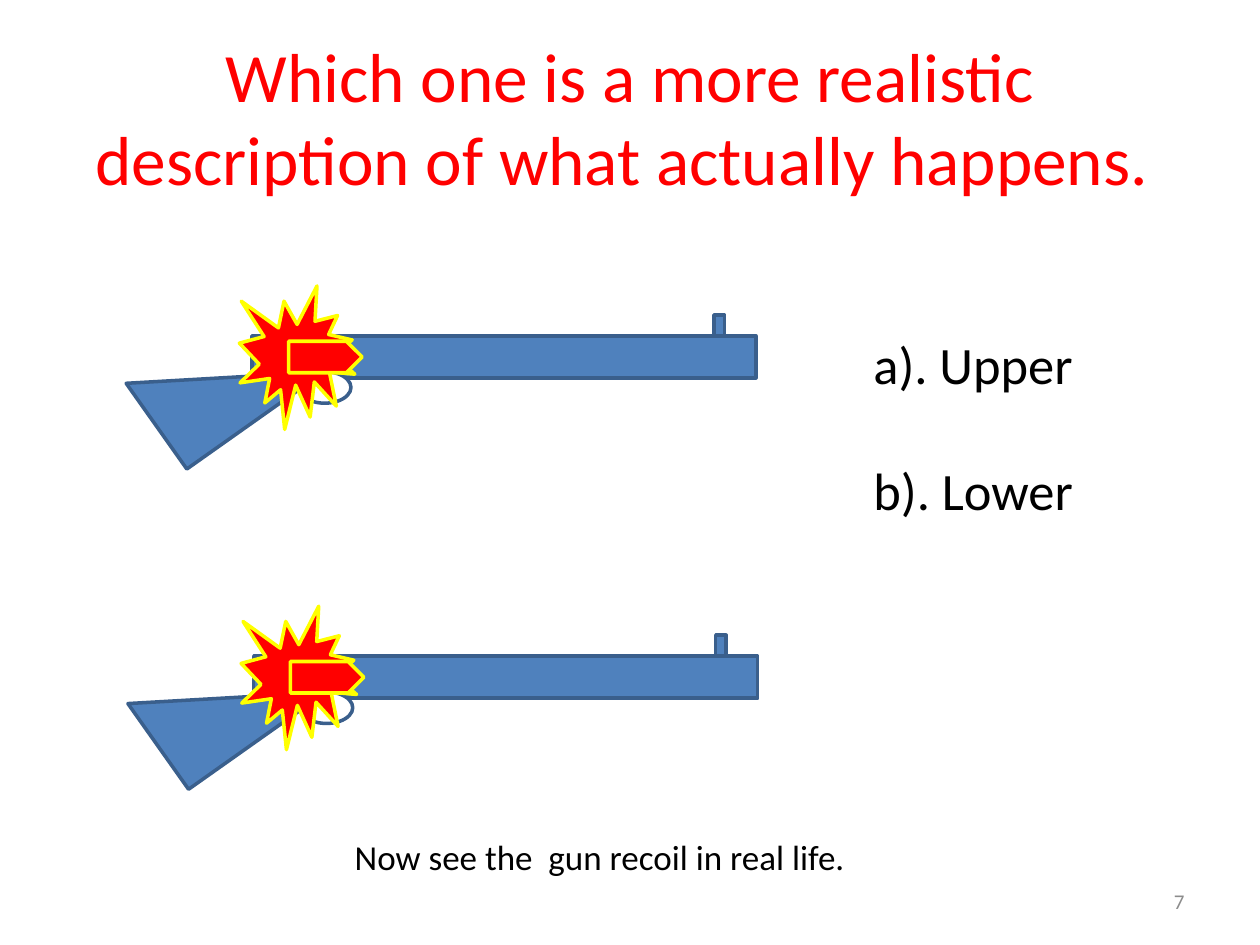
from dataclasses import dataclass

from lxml import etree
from pptx import Presentation
from pptx.dml.color import RGBColor
from pptx.enum.shapes import MSO_CONNECTOR, MSO_SHAPE
from pptx.enum.text import MSO_ANCHOR, PP_ALIGN
from pptx.oxml.ns import qn
from pptx.util import Pt

RECT = MSO_SHAPE.RECTANGLE
WEDGE = MSO_SHAPE.RIGHT_TRIANGLE
OVAL = MSO_SHAPE.OVAL
BURST = MSO_SHAPE.EXPLOSION1
PENTA = MSO_SHAPE.PENTAGON
LINE = MSO_CONNECTOR.STRAIGHT
LEFT, MID, RIGHT = PP_ALIGN.LEFT, PP_ALIGN.CENTER, PP_ALIGN.RIGHT
TOP, CENTER = MSO_ANCHOR.TOP, MSO_ANCHOR.MIDDLE


@dataclass(frozen=True)
class Theme:
    font: str = "Calibri"
    red: str = "FF0000"
    yellow: str = "FFFF00"
    steel: str = "4F81BD"
    edge: str = "3A5F8C"
    spring: str = "4B7EBC"
    white: str = "FFFFFF"
    black: str = "000000"
    gray: str = "8C8C8C"
    title: float = 39.6
    choice: float = 30
    note: float = 20
    number: float = 12
    stroke: float = 2
    thin: float = 0.75


THEME = Theme()


def rgb(code):
    return RGBColor.from_string(code)


def add_part(shapes, kind, box, fill, edge, turn=0):
    part = shapes.add_shape(kind, *map(Pt, box))
    part.shadow.inherit = False
    part.fill.solid()
    part.fill.fore_color.rgb = rgb(fill)
    part.line.color.rgb = rgb(edge)
    part.line.width = Pt(THEME.stroke)
    part.rotation = turn


def add_text(slide, box, lines, size, color, align=LEFT, anchor=TOP, gap=0):
    frame = slide.shapes.add_textbox(*map(Pt, box)).text_frame
    frame.word_wrap = True
    frame.vertical_anchor = anchor
    for i, line in enumerate(lines):
        para = frame.add_paragraph() if i else frame.paragraphs[0]
        para.alignment = align
        if i:
            para.space_before = Pt(gap)
        run = para.add_run()
        run.text = line
        run.font.name = THEME.font
        run.font.size = Pt(size)
        run.font.color.rgb = rgb(color)


def add_gun(slide, box):
    """Draw a gun whose barrel fills the box."""
    x, y, w, h = box
    gun = slide.shapes.add_group_shape().shapes
    parts = [
        (RECT, box, THEME.steel, 0),
        (WEDGE, (x - 63.4, y - 6.2, 96, 60), THEME.steel, 324.7),
        (RECT, (x + w - 24, y - 12, 6, 12), THEME.steel, 0),
        (OVAL, (x + 26.6, y + h - 3.6, 30, 18), THEME.white, 0),
    ]
    for kind, place, fill, turn in parts:
        add_part(gun, kind, place, fill, THEME.edge, turn)

    # Trigger
    ends = (x + 31, y + h - 6, x + 46, y + h + 12)
    trigger = gun.add_connector(LINE, *map(Pt, ends))
    trigger.line.color.rgb = rgb(THEME.spring)
    trigger.line.width = Pt(THEME.thin)
    etree.SubElement(trigger.line._get_or_add_ln().getparent(),
                     qn("a:effectLst"))

    # Blast and bullet
    for kind, place in [(BURST, (x - 7.2, y - 28.6, 66, 82)),
                        (PENTA, (x + 21, y + 3, 42, 18))]:
        add_part(slide.shapes, kind, place, THEME.red, THEME.yellow)


def main():
    deck = Presentation()
    deck.slide_width, deck.slide_height = Pt(720), Pt(540)
    slide = deck.slides.add_slide(deck.slide_layouts[6])

    # Question
    question = "Which one is a more realistic description of what actually happens. "
    add_text(slide, (36, 21.6, 648, 90), [question],
             THEME.title, THEME.red, MID, CENTER)

    # Upper and lower guns
    for x, y in [(144, 192), (145, 375)]:
        add_gun(slide, (x, y, 288, 24))

    # Closing note, choices and slide number
    add_text(slide, (48, 474, 594, 32), ["Now see the  gun recoil in real life. "],
             THEME.note, THEME.black, MID)
    add_text(slide, (492, 186, 192, 117), ["a). Upper", "b). Lower"],
             THEME.choice, THEME.black, gap=36)
    add_text(slide, (516, 500.5, 168, 28.75), ["7"],
             THEME.number, THEME.gray, RIGHT, CENTER)

    deck.save("out.pptx")


if __name__ == "__main__":
    main()
